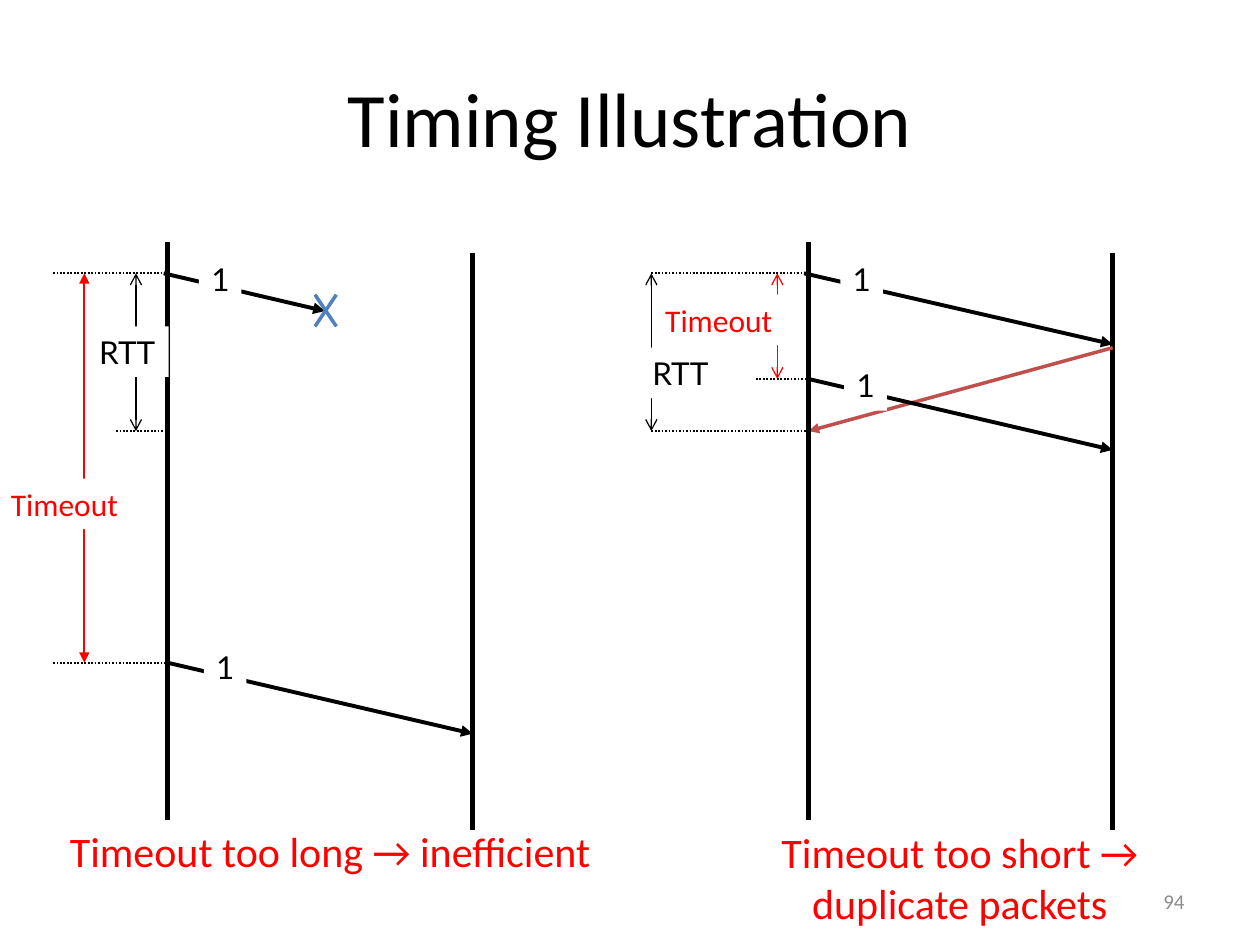
from lxml import etree
from pptx import Presentation
from pptx.dml.color import RGBColor
from pptx.enum.dml import MSO_LINE
from pptx.enum.shapes import MSO_CONNECTOR, MSO_SHAPE
from pptx.enum.text import MSO_ANCHOR, PP_ALIGN
from pptx.oxml.ns import qn
from pptx.util import Cm, Pt

STRAIGHT = MSO_CONNECTOR.STRAIGHT
RECT = MSO_SHAPE.RECTANGLE
DOTS = MSO_LINE.ROUND_DOT
LEFT, CENTER, RIGHT = PP_ALIGN.LEFT, PP_ALIGN.CENTER, PP_ALIGN.RIGHT
TOP, MIDDLE = MSO_ANCHOR.TOP, MSO_ANCHOR.MIDDLE
BLACK, WHITE, RED, GRAY = "000000", "FFFFFF", "FF0000", "8C8C8C"

SENDER_1, RECEIVER_1, SENDER_2, RECEIVER_2 = 3.38, 9.53, 16.3, 22.43
SENT, EARLY_RESEND, ACKED, LATE_RESEND = 5.51, 7.64, 8.69, 13.36
TRAVEL = 1.43
RTT_1, TIMEOUT_1, RTT_2, TIMEOUT_2 = 2.74, 1.7, 13.13, 15.67

LINES = {
    "host": dict(color=BLACK, width=3),
    "packet": dict(color=BLACK, width=2.25, tail="triangle"),
    "ack": dict(color="C0504D", width=2, tail="triangle"),
    "loss": dict(color="4F81BD", width=2),
    "guide": dict(color=BLACK, width=1, dash=DOTS),
    "rtt": dict(color=BLACK, width=0.75, head="arrow", tail="arrow"),
    "short": dict(color=RED, width=0.75, head="arrow", tail="arrow"),
    "long": dict(color=RED, width=1, head="triangle", tail="triangle"),
}
LABELS = {
    "1": dict(width=0.86, font="Lato", color=BLACK),
    "RTT": dict(width=1.65, font="Lato", color=BLACK),
    "Timeout": dict(width=3.2, font="Calibri", color=RED),
}
LABEL_HEIGHT = 1.02

DIAGRAM = [
    ("short", TIMEOUT_2, SENT, TIMEOUT_2, EARLY_RESEND),
    ("host", RECEIVER_1, 5.11, RECEIVER_1, 16.74),
    ("packet", 3.3, SENT, 6.55, 6.27),
    ("1", 4.01, 5.11),
    ("host", SENDER_1, 4.88, SENDER_1, 16.54),
    ("packet", SENDER_1, LATE_RESEND, RECEIVER_1, LATE_RESEND + TRAVEL),
    ("1", 4.11, 12.93),
    ("host", RECEIVER_2, 5.11, RECEIVER_2, 16.74),
    ("packet", 16.21, SENT, RECEIVER_2, SENT + TRAVEL),
    ("1", 16.94, 5.11),
    ("ack", RECEIVER_2, 7.01, SENDER_2, ACKED),
    ("packet", SENDER_2, EARLY_RESEND, RECEIVER_2, EARLY_RESEND + TRAVEL),
    ("1", 17.02, 7.26),
    ("rtt", RTT_1, SENT, RTT_1, ACKED),
    ("RTT", 1.75, 6.58),
    ("loss", 6.35, 5.94, 6.78, 6.58),
    ("loss", 6.78, 5.94, 6.35, 6.58),
    ("long", TIMEOUT_1, SENT, TIMEOUT_1, LATE_RESEND),
    ("Timeout", -0.03, 9.65),
    ("guide", 1.07, LATE_RESEND, SENDER_1, LATE_RESEND),
    ("guide", 1.07, SENT, SENDER_1, SENT),
    ("guide", 2.34, ACKED, SENDER_1, ACKED),
    ("guide", RTT_2, ACKED, SENDER_2, ACKED),
    ("guide", RTT_2, SENT, SENDER_2, SENT),
    ("Timeout", 13.16, 5.94),
    ("guide", 15.24, EARLY_RESEND, SENDER_2, EARLY_RESEND),
    ("host", SENDER_2, 4.88, SENDER_2, 16.54),
    ("rtt", RTT_2, SENT, RTT_2, ACKED),
    ("RTT", 12.9, 7.01),
]
TEXTS = [
    (["Timeout too long → inefficient"], (0.18, 16.51, 12.95, 1.27),
     dict(size=24, color=RED, align=CENTER)),
    (["Timeout too short → ", "duplicate packets "], (13.49, 16.54, 11.91, 2.31),
     dict(size=24, color=RED, align=CENTER)),
    (["94"], (18.21, 17.65, 5.92, 1.02),
     dict(size=12, color=GRAY, align=RIGHT, anchor=MIDDLE)),
]


def rgb(value):
    return RGBColor.from_string(value)


def write(shape, lines, size, color, align, font="Calibri", anchor=TOP, wrap=True):
    tf = shape.text_frame
    tf.word_wrap = wrap
    tf.vertical_anchor = anchor
    for i, text in enumerate(lines):
        p = tf.paragraphs[0] if i == 0 else tf.add_paragraph()
        p.alignment = align
        r = p.add_run()
        r.text = text
        for name, value in dict(name=font, size=Pt(size)).items():
            setattr(r.font, name, value)
        r.font.color.rgb = rgb(color)


def add_line(s, ends, color, width, dash=None, head=None, tail=None):
    line = s.shapes.add_connector(STRAIGHT, *map(Cm, ends))
    line.line.color.rgb = rgb(color)
    line.line.width = Pt(width)
    if dash:
        line.line.dash_style = dash
    ln = line.line._get_or_add_ln()
    for tag, kind in (("a:headEnd", head), ("a:tailEnd", tail)):
        if kind:
            etree.SubElement(ln, qn(tag), type=kind)
    etree.SubElement(line._element.spPr, qn("a:effectLst"))


def add_label(s, text, x, y, width, font, color):
    sp = s.shapes.add_shape(RECT, Cm(x), Cm(y), Cm(width), Cm(LABEL_HEIGHT))
    sp.shadow.inherit = False
    sp.fill.solid()
    sp.fill.fore_color.rgb = rgb(WHITE)
    sp.line.fill.background()
    write(sp, [text], 18, color, LEFT, font, wrap=False)


def main():
    prs = Presentation()
    prs.slide_width, prs.slide_height = Cm(25.4), Cm(19.05)
    s = prs.slides.add_slide(prs.slide_layouts[5])
    title = s.shapes.title
    box = dict(left=1.27, top=0.76, width=22.86, height=3.18)
    for name, value in box.items():
        setattr(title, name, Cm(value))
    write(title, ["Timing Illustration"], 44, BLACK, CENTER, anchor=MIDDLE)
    for kind, *place in DIAGRAM:
        if kind in LINES:
            add_line(s, place, **LINES[kind])
        else:
            add_label(s, kind, *place, **LABELS[kind])
    for lines, place, style in TEXTS:
        write(s.shapes.add_textbox(*map(Cm, place)), lines, **style)
    prs.save("out.pptx")


if __name__ == "__main__":
    main()
